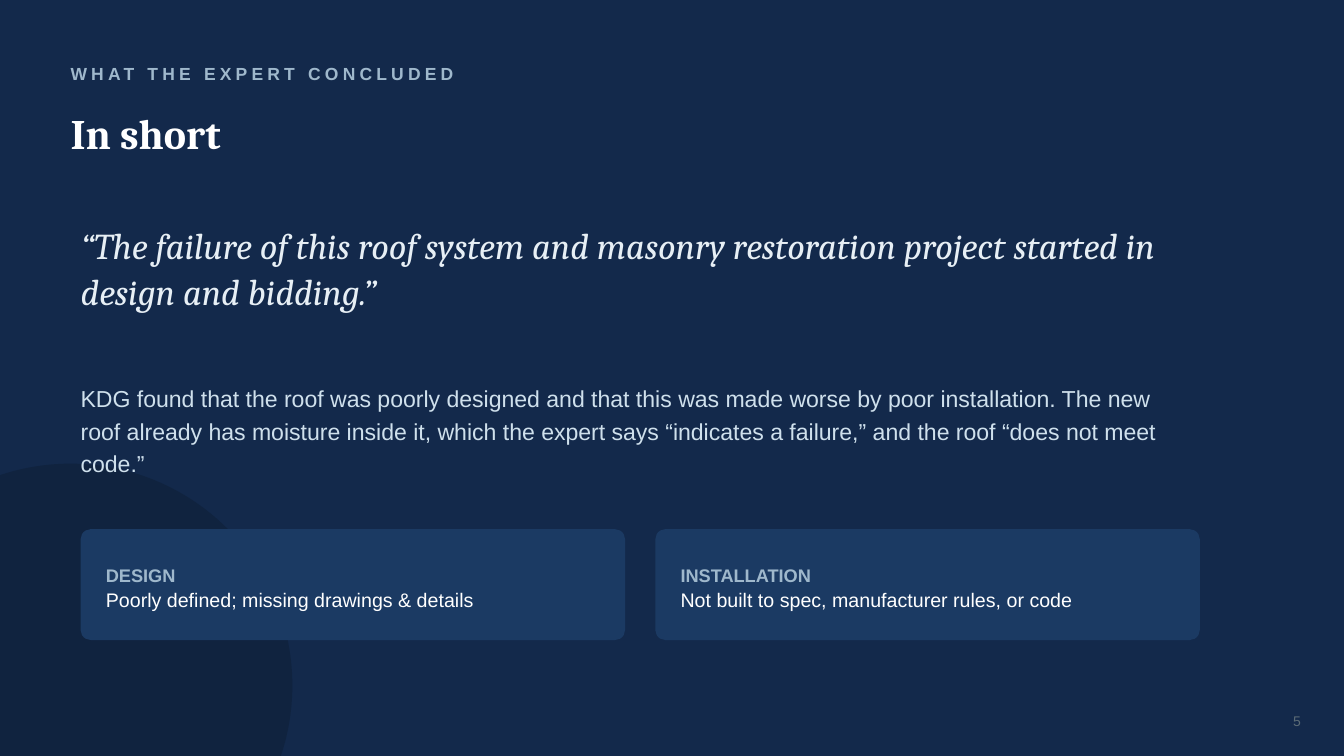
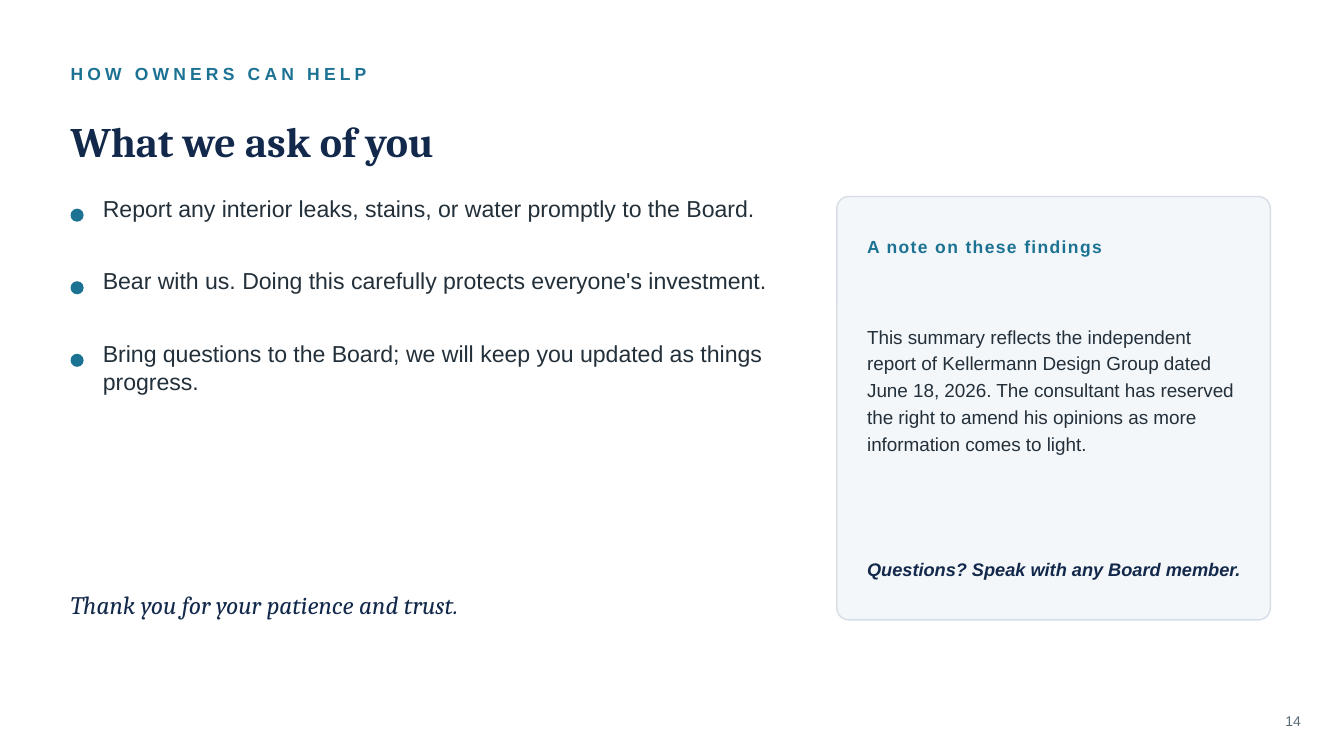
from dataclasses import dataclass
from typing import NamedTuple

from pptx import Presentation
from pptx.dml.color import RGBColor
from pptx.enum.shapes import MSO_SHAPE as Shape
from pptx.enum.text import MSO_ANCHOR as Anchor, PP_ALIGN as Align
from pptx.slide import Slide
from pptx.util import Emu, Pt

PX = 9144  # EMU per px, 100 px to the inch


@dataclass(frozen=True)
class Theme:
    navy: str = "13294B"
    deep_navy: str = "10233F"
    card_blue: str = "1B3A63"
    teal: str = "1C7293"
    mist: str = "9FB8CC"
    pale: str = "CFE0EC"
    quote: str = "E7EFF5"
    ink: str = "23303A"
    gray: str = "5B6B76"
    panel: str = "F4F7FA"
    panel_edge: str = "D5DEE6"
    white: str = "FFFFFF"
    serif: str = "Cambria"
    sans: str = "Arial"
    page_size: float = 10
    label_size: float = 12.5
    card_label_size: float = 13
    note_size: float = 13.5
    card_size: float = 14
    body_size: float = 16.5
    thanks_size: float = 18
    quote_size: float = 26
    title_size: float = 30


THEME = Theme()


class Box(NamedTuple):
    left: int
    top: int
    width: int
    height: int

    def emu(self) -> list[Emu]:
        return [Emu(value * PX) for value in self]


@dataclass(frozen=True)
class Style:
    size: float
    color: str
    font: str = THEME.sans
    bold: bool = False
    italic: bool = False
    tracking: int = 0  # hundredths of a point
    leading: float = 1.0


@dataclass(frozen=True)
class Heading:
    kicker: str
    kicker_color: str
    title: str
    title_color: str
    title_height: int
    title_leading: float = 1.0


class Card(NamedTuple):
    label: str
    finding: str


def add_text(slide: Slide, box: Box, *lines: tuple[str, Style], anchor: Anchor = Anchor.MIDDLE,
             align: Align = Align.LEFT, inset: int = 0) -> None:
    """Place a text box with one paragraph per line."""
    frame = slide.shapes.add_textbox(*box.emu()).text_frame
    frame.word_wrap = True
    frame.vertical_anchor = anchor
    frame.margin_left = frame.margin_right = Emu(inset * PX)
    frame.margin_top = frame.margin_bottom = Emu(inset * PX // 2)
    frame.text = "\n".join(text for text, _ in lines)
    for paragraph, (_, style) in zip(frame.paragraphs, lines):
        paragraph.alignment = align
        paragraph.line_spacing = style.leading
        for run in paragraph.runs:
            font = run.font
            font.name, font.size = style.font, Pt(style.size)
            font.bold, font.italic = style.bold, style.italic
            font.color.rgb = RGBColor.from_string(style.color)
            if style.tracking:
                run._r.get_or_add_rPr().set("spc", str(style.tracking))


def add_panel(slide: Slide, kind: Shape, box: Box, fill: str, edge: str = "",
              radius: float = 0) -> None:
    """Place a flat filled shape, with an optional outline and corner radius."""
    panel = slide.shapes.add_shape(kind, *box.emu())
    panel.shadow.inherit = False
    panel.fill.solid()
    panel.fill.fore_color.rgb = RGBColor.from_string(fill)
    if edge:
        panel.line.color.rgb = RGBColor.from_string(edge)
        panel.line.width = Pt(1)
    else:
        panel.line.fill.background()
    if radius:
        panel.adjustments[0] = radius / min(box.width, box.height)


def set_background(slide: Slide, color: str) -> None:
    fill = slide.background.fill
    fill.solid()
    fill.fore_color.rgb = RGBColor.from_string(color)


def add_heading(slide: Slide, heading: Heading) -> None:
    add_text(slide, Box(70, 55, 1100, 35),
             (heading.kicker, Style(THEME.label_size, heading.kicker_color, bold=True, tracking=300)))
    add_text(slide, Box(70, 92, 1190, heading.title_height),
             (heading.title, Style(THEME.title_size, heading.title_color, THEME.serif, bold=True,
                                   leading=heading.title_leading)))


def add_page_number(slide: Slide, number: int) -> None:
    add_text(slide, Box(1260, 700, 40, 30), (str(number), Style(THEME.page_size, THEME.gray)),
             align=Align.RIGHT, inset=10)


def build_conclusion(slide: Slide) -> None:
    set_background(slide, THEME.navy)
    add_panel(slide, Shape.OVAL, Box(-150, 460, 440, 440), THEME.deep_navy)
    add_heading(slide, Heading("WHAT THE EXPERT CONCLUDED", THEME.mist,
                               "In short", THEME.white, 80))

    # Quote and explanation
    add_text(slide, Box(80, 200, 1150, 130),
             ("“The failure of this roof system and masonry restoration project started in "
              "design and bidding.”",
              Style(THEME.quote_size, THEME.quote, THEME.serif, italic=True, leading=1.05)))
    add_text(slide, Box(80, 360, 1080, 130),
             ("KDG found that the roof was poorly designed and that this was made worse by poor "
              "installation. The new roof already has moisture inside it, which the expert says "
              "“indicates a failure,” and the roof “does not meet code.”",
              Style(THEME.body_size, THEME.pale, leading=1.18)))

    # Cards for the two causes
    cards = [
        Card("DESIGN", "Poorly defined; missing drawings & details"),
        Card("INSTALLATION", "Not built to spec, manufacturer rules, or code"),
    ]
    label_style = Style(THEME.card_label_size, THEME.mist, bold=True, leading=1.05)
    finding_style = Style(THEME.card_size, THEME.white, leading=1.05)
    width, gap = 540, 30
    for index, card in enumerate(cards):
        left = 80 + index * (width + gap)
        add_panel(slide, Shape.ROUNDED_RECTANGLE, Box(left, 525, width, 110),
                  THEME.card_blue, radius=10)
        add_text(slide, Box(left + 25, 540, 500, 85),
                 (card.label, label_style), (card.finding, finding_style))

    add_page_number(slide, 5)


def build_requests(slide: Slide) -> None:
    set_background(slide, THEME.white)
    add_heading(slide, Heading("HOW OWNERS CAN HELP", THEME.teal,
                               "What we ask of you", THEME.navy, 100, 0.98))

    # Requests, each with a dot
    requests = [
        "Report any interior leaks, stains, or water promptly to the Board.",
        "Bear with us. Doing this carefully protects everyone's investment.",
        "Bring questions to the Board; we will keep you updated as things progress.",
    ]
    row_height = 72
    for index, request in enumerate(requests):
        top = 192 + index * row_height
        add_panel(slide, Shape.OVAL, Box(70, top + 15, 13, 13), THEME.teal)
        add_text(slide, Box(102, top, 688, row_height),
                 (request, Style(THEME.body_size, THEME.ink, leading=1.02)), anchor=Anchor.TOP)

    # Note panel
    add_panel(slide, Shape.ROUNDED_RECTANGLE, Box(830, 195, 430, 420),
              THEME.panel, THEME.panel_edge, radius=12)
    add_text(slide, Box(860, 225, 370, 40),
             ("A note on these findings",
              Style(THEME.label_size, THEME.teal, bold=True, tracking=100)))
    add_text(slide, Box(860, 275, 375, 220),
             ("This summary reflects the independent report of Kellermann Design Group dated "
              "June 18, 2026. The consultant has reserved the right to amend his opinions as "
              "more information comes to light.",
              Style(THEME.note_size, THEME.ink, leading=1.18)))
    add_text(slide, Box(860, 535, 375, 60),
             ("Questions? Speak with any Board member.",
              Style(THEME.card_label_size, THEME.navy, bold=True, italic=True)))

    # Closing line
    add_text(slide, Box(70, 570, 700, 60),
             ("Thank you for your patience and trust.",
              Style(THEME.thanks_size, THEME.navy, THEME.serif, italic=True)))
    add_page_number(slide, 14)


def main() -> None:
    deck = Presentation()
    deck.slide_width, deck.slide_height = Emu(1333 * PX), Emu(750 * PX)
    blank = deck.slide_layouts[6]
    for build in (build_conclusion, build_requests):
        build(deck.slides.add_slide(blank))
    deck.save("out.pptx")


if __name__ == "__main__":
    main()
